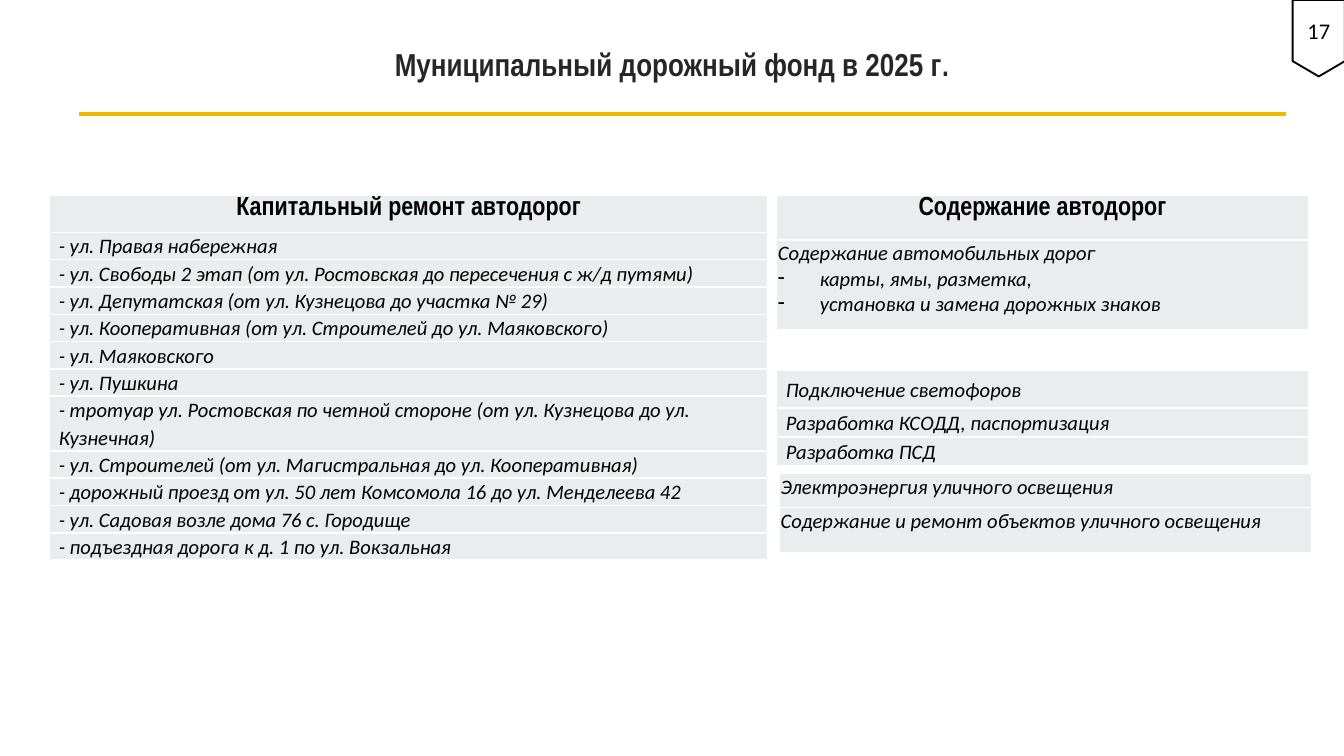
from dataclasses import dataclass

from lxml.etree import SubElement
from pptx import Presentation
from pptx.dml.color import RGBColor
from pptx.enum.shapes import MSO_CONNECTOR, MSO_SHAPE
from pptx.enum.text import MSO_ANCHOR, MSO_AUTO_SIZE, PP_ALIGN
from pptx.oxml.ns import qn
from pptx.slide import Slide
from pptx.util import Pt


@dataclass(frozen=True)
class Theme:
    head: str = "Arial Narrow"
    body: str = "Calibri"
    ink: str = "000000"
    title: str = "262626"
    gold: str = "F2B800"
    fill: str = "E9EDED"
    white: str = "FFFFFF"
    big: float = 17
    dot: float = 16
    mid: float = 14
    page: float = 12
    small: float = 11


@dataclass(frozen=True)
class Row:
    high: float
    lines: tuple[str, ...]
    head: bool = False


@dataclass(frozen=True)
class Grid:
    left: float
    top: float
    wide: float
    rows: tuple[Row, ...]
    padded: bool = True


theme = Theme()
LINE = 14.65
DASH = "– "

WORKS = (
    "- ул. Правая набережная",
    "- ул. Свободы 2 этап (от ул. Ростовская до пересечения с ж/д путями)",
    "- ул. Депутатская (от ул. Кузнецова до участка № 29)",
    "- ул. Кооперативная (от ул. Строителей до ул. Маяковского)",
    "- ул. Маяковского",
    "- ул. Пушкина",
    "- тротуар ул. Ростовская по четной стороне (от ул. Кузнецова до ул. Кузнечная)",
    "- ул. Строителей (от ул. Магистральная до ул. Кооперативная)",
    "- дорожный проезд от ул. 50 лет Комсомола 16 до ул. Менделеева 42",
    "- ул. Садовая возле дома 76 с. Городище",
    "- подъездная дорога к д. 1 по ул. Вокзальная",
)

GRIDS = (
    Grid(416, 104.5, 285, (
        Row(24, ("Содержание автодорог",), True),
        Row(48, ("Содержание автомобильных дорог",
                 DASH + "карты, ямы, разметка,",
                 DASH + "установка и замена дорожных знаков")),
    ), False),
    Grid(26.5, 104.5, 385, (
        Row(20, ("Капитальный ремонт автодорог",), True),
        *(Row(LINE * (2 if "тротуар" in work else 1), (work,)) for work in WORKS),
    )),
    Grid(416, 198.5, 285, (
        Row(20, ("Подключение светофоров",)),
        Row(15.5, ("Разработка КСОДД, паспортизация",)),
        Row(15.5, ("Разработка ПСД",)),
    )),
    Grid(417.5, 253.5, 285, (
        Row(18.5, ("Электроэнергия уличного освещения",)),
        Row(24, ("Содержание и ремонт объектов уличного освещения",)),
    ), False),
)


def style(font, name: str, size: float, color: str = theme.ink,
          bold: bool = False, slant: bool = False) -> None:
    font.name, font.size = name, Pt(size)
    font.bold, font.italic = bold, slant
    font.color.rgb = RGBColor.from_string(color)


def inset(box, side: float, top: float, base: float) -> None:
    box.margin_left = box.margin_right = Pt(side)
    box.margin_top, box.margin_bottom = Pt(top), Pt(base)


def edge(cell) -> None:
    props = cell._tc.get_or_add_tcPr()
    for side in ("a:lnL", "a:lnR", "a:lnT", "a:lnB"):
        line = SubElement(props, qn(side), w=str(Pt(1)))
        paint = SubElement(line, qn("a:solidFill"))
        SubElement(paint, qn("a:srgbClr"), val=theme.white)


def bullet(para) -> None:
    props = para._p.get_or_add_pPr()
    props.set("marL", str(Pt(22.5)))
    props.set("indent", str(-Pt(22.5)))
    SubElement(props, qn("a:buChar"), char="-")


def fill_cell(cell, row: Row, padded: bool) -> None:
    edge(cell)
    cell.fill.solid()
    cell.fill.fore_color.rgb = RGBColor.from_string(theme.fill)
    loose = padded and not row.head
    inset(cell, 5 if loose else 0.7, 0 if loose else 0.7, 0)
    cell.vertical_anchor = MSO_ANCHOR.MIDDLE if loose else MSO_ANCHOR.TOP
    frame = cell.text_frame
    frame.text = "\n".join(line.removeprefix(DASH) for line in row.lines)
    for para, line in zip(frame.paragraphs, row.lines):
        if line.startswith(DASH):
            bullet(para)
        if loose:
            para.line_spacing = 1.07
        if row.head:
            para.alignment = PP_ALIGN.CENTER
            style(para.font, theme.head, theme.mid, bold=True)
        else:
            style(para.font, theme.body, theme.small, slant=True)


def draw_grid(slide: Slide, grid: Grid) -> None:
    high = sum(row.high for row in grid.rows)
    table = slide.shapes.add_table(len(grid.rows), 1, Pt(grid.left), Pt(grid.top),
                                   Pt(grid.wide), Pt(high)).table
    table.first_row = table.horz_banding = False
    for spot, row in enumerate(grid.rows):
        table.rows[spot].height = Pt(row.high)
        fill_cell(table.cell(spot, 0), row, grid.padded)


def draw_title(slide: Slide) -> None:
    title = slide.shapes.title
    title.left, title.top, title.width, title.height = Pt(206.5), Pt(10), Pt(459.5), Pt(51)
    frame = title.text_frame
    frame.auto_size, frame.word_wrap = MSO_AUTO_SIZE.NONE, True
    frame.vertical_anchor = MSO_ANCHOR.MIDDLE
    inset(frame, 5, 3, 3)
    para = frame.paragraphs[0]
    para.alignment, para.line_spacing = PP_ALIGN.LEFT, 0.9
    for text, size in (("Муниципальный дорожный фонд в 2025 г", theme.big), (".", theme.dot)):
        run = para.add_run()
        run.text = text
        style(run.font, theme.head, size, theme.title, bold=True)


def draw_rule(slide: Slide) -> None:
    rule = slide.shapes.add_connector(MSO_CONNECTOR.STRAIGHT, Pt(42.5), Pt(61), Pt(689), Pt(61))
    rule.line.color.rgb = RGBColor.from_string(theme.gold)
    rule.line.width = Pt(2.25)
    SubElement(rule._element.spPr, qn("a:effectLst"))


def draw_page(slide: Slide) -> None:
    tag = slide.shapes.add_shape(MSO_SHAPE.FLOWCHART_OFFPAGE_CONNECTOR,
                                 Pt(692.5), Pt(0), Pt(28), Pt(41))
    tag.shadow.inherit = False
    tag.fill.solid()
    tag.fill.fore_color.rgb = RGBColor.from_string(theme.white)
    tag.line.color.rgb = RGBColor.from_string(theme.ink)
    tag.line.width = Pt(1)
    frame = tag.text_frame
    inset(frame, 0, 0, 0)
    frame.vertical_anchor = MSO_ANCHOR.MIDDLE
    para = frame.paragraphs[0]
    para.text, para.alignment = "17", PP_ALIGN.CENTER
    style(para.font, theme.body, theme.page)


def main() -> None:
    deck = Presentation()
    deck.slide_width, deck.slide_height = Pt(720), Pt(405)
    slide = deck.slides.add_slide(deck.slide_layouts[5])
    draw_title(slide)
    draw_rule(slide)
    for grid in GRIDS:
        draw_grid(slide, grid)
    draw_page(slide)
    deck.save("out.pptx")


if __name__ == "__main__":
    main()
